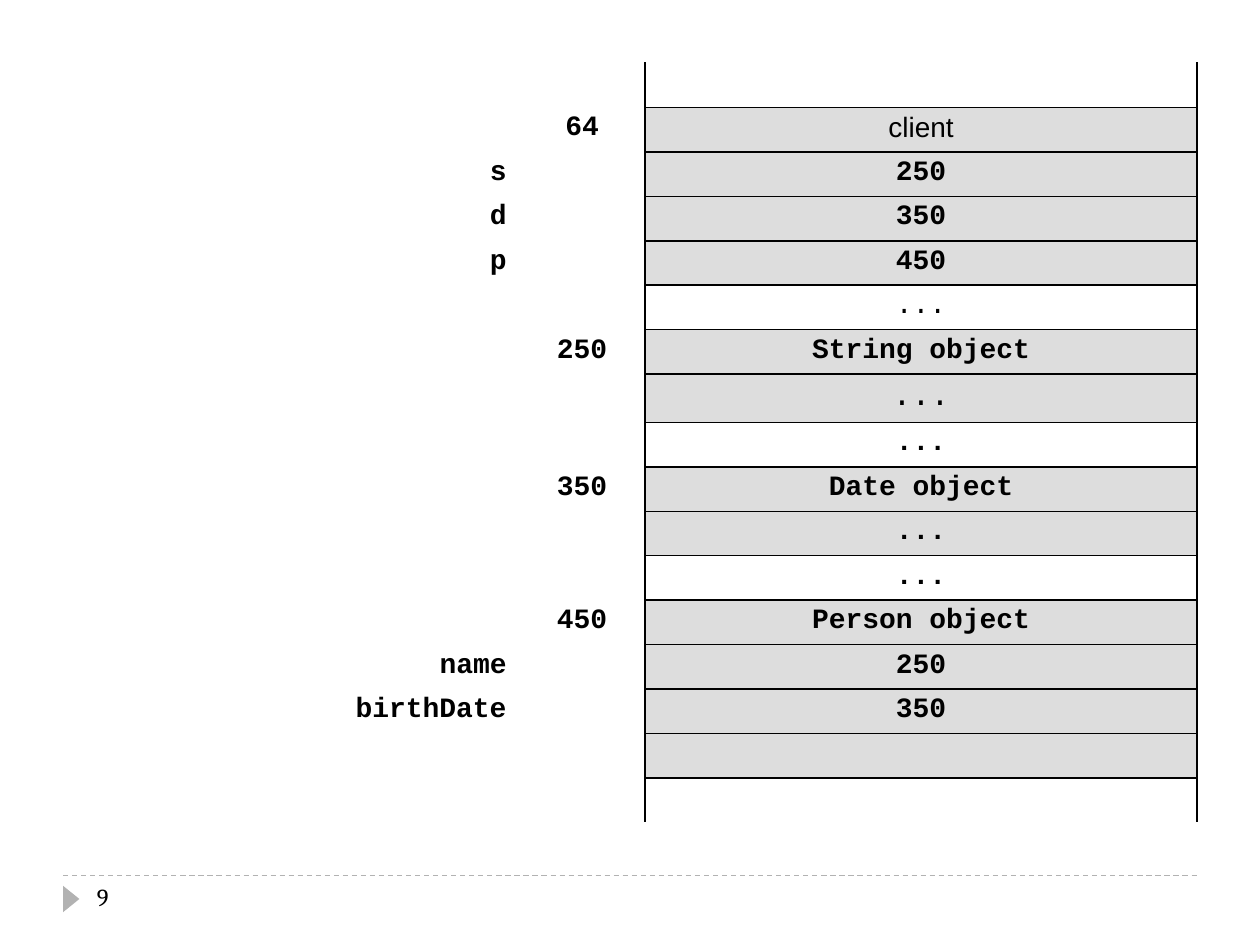
from lxml.etree import SubElement
from pptx import Presentation
from pptx.dml.color import RGBColor
from pptx.enum.dml import MSO_LINE_DASH_STYLE as DASH
from pptx.enum.shapes import MSO_CONNECTOR as CONNECTOR, MSO_SHAPE as SHAPE
from pptx.enum.text import MSO_ANCHOR as ANCHOR, PP_ALIGN as ALIGN
from pptx.oxml import parse_xml
from pptx.oxml.ns import nsdecls, qn
from pptx.util import Inches, Pt

COLORS = {"text": "000000", "used": "DDDDDD", "footer": "B2B2B2"}
CODE_FONT = "Courier New"
COLUMN_WIDTHS = (2.75, 1, 4.38)
ALIGNMENTS = (ALIGN.RIGHT, ALIGN.CENTER, ALIGN.CENTER)

# variable name, address, content, whether the memory is in use
MEMORY = [
    ("", "", "", False),
    ("", "64", "client", True),
    ("s", "", "250", True),
    ("d", "", "350", True),
    ("p", "", "450", True),
    ("", "", "...", False),
    ("", "250", "String object", True),
    ("", "", "...", True),
    ("", "", "...", False),
    ("", "350", "Date object", True),
    ("", "", "...", True),
    ("", "", "...", False),
    ("", "450", "Person object", True),
    ("name", "", "250", True),
    ("birthDate", "", "350", True),
    ("", "", "", True),
    ("", "", "", False),
]
# formats of the content cells that differ from 16 pt bold code
SPECIAL_FORMATS = {
    1: {"name": "Arial", "bold": False},
    5: {"bold": False},
    7: {"size": 18, "bold": False},
}


def color(name):
    return RGBColor.from_string(COLORS[name])


def set_borders(cell, sides):
    """Draw 1 pt lines on the given sides, a string in the order LRTB."""
    properties = cell._tc.get_or_add_tcPr()
    for position, side in enumerate(sides):
        properties.insert(position, parse_xml(
            f'<a:ln{side} {nsdecls("a")} w="{Pt(1)}"><a:solidFill>'
            f'<a:srgbClr val="{COLORS["text"]}"/></a:solidFill></a:ln{side}>'))


def write_cell(cell, text, alignment, name=CODE_FONT, size=16, bold=True):
    cell.margin_top = cell.margin_bottom = Pt(3)
    paragraph = cell.text_frame.paragraphs[0]
    paragraph.alignment = alignment
    if not text:
        # the size of an empty paragraph keeps the row from growing
        end = SubElement(paragraph._p, qn("a:endParaRPr"), sz=str(size * 100))
        SubElement(end, qn("a:latin"), typeface=name)
        return
    paragraph.text = text
    font = paragraph.runs[0].font
    font.name, font.size, font.bold = name, Pt(size), bold
    font.color.rgb = color("text")


def add_memory_table(slide, left, top, height):
    table = slide.shapes.add_table(
        len(MEMORY), len(COLUMN_WIDTHS), Inches(left), Inches(top),
        Inches(sum(COLUMN_WIDTHS)), Inches(height)).table
    table.first_row = table.horz_banding = False
    for column, column_width in zip(table.columns, COLUMN_WIDTHS):
        column.width = Inches(column_width)

    last = len(MEMORY) - 1
    for index, (*texts, used) in enumerate(MEMORY):
        table.rows[index].height = Inches(height / len(MEMORY))
        cells = list(table.rows[index].cells)
        for cell, text, alignment in zip(cells, texts, ALIGNMENTS):
            special = SPECIAL_FORMATS.get(index, {}) if cell is cells[-1] else {}
            write_cell(cell, text, alignment, **special)
            cell.fill.background()
        _, address, content = cells
        if used:
            content.fill.solid()
            content.fill.fore_color.rgb = color("used")
        set_borders(address, "R")
        set_borders(content, {0: "LRB", last: "LRT"}.get(index, "LRTB"))


def add_footer(slide, left, top, width, number):
    line = slide.shapes.add_connector(
        CONNECTOR.STRAIGHT, Inches(left), Inches(top),
        Inches(left + width), Inches(top))
    line.line.color.rgb = color("footer")
    line.line.width = Pt(0.75)
    line.line.dash_style = DASH.DASH
    SubElement(line._element.spPr, qn("a:effectLst"))

    marker = slide.shapes.add_shape(
        SHAPE.ISOSCELES_TRIANGLE, Inches(left - 0.04), Inches(top + 0.12),
        Inches(0.21), Inches(0.13))
    marker.rotation = 90
    marker.shadow.inherit = False
    marker.fill.solid()
    marker.fill.fore_color.rgb = color("footer")
    marker.line.fill.background()

    box = slide.shapes.add_textbox(
        Inches(left + 0.17), Inches(top), Inches(2.17), Inches(0.4))
    frame = box.text_frame
    frame.word_wrap = True
    frame.vertical_anchor = ANCHOR.TOP
    frame.text = number
    font = frame.paragraphs[0].runs[0].font
    font.name, font.size = "Cambria", Pt(14)
    font.color.rgb = color("text")


def main():
    presentation = Presentation()
    presentation.slide_width = Inches(10)
    presentation.slide_height = Inches(7.5)
    slide = presentation.slides.add_slide(presentation.slide_layouts[6])
    add_footer(slide, 0.5, 6.95, 9, "9")
    add_memory_table(slide, 1.37, 0.5, 6)
    presentation.save("out.pptx")


if __name__ == "__main__":
    main()
